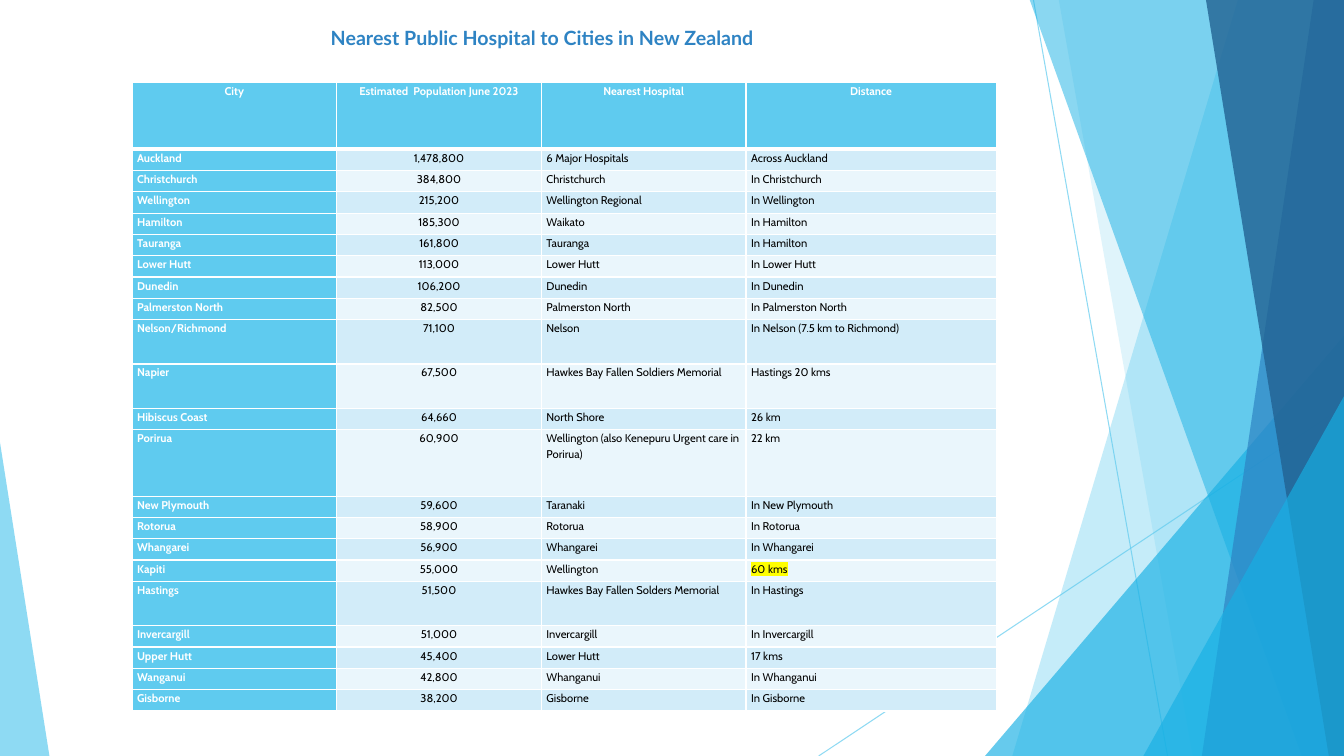
from dataclasses import dataclass

from lxml.etree import SubElement
from pptx import Presentation
from pptx.dml.color import RGBColor
from pptx.enum.shapes import MSO_CONNECTOR, MSO_SHAPE
from pptx.enum.text import MSO_ANCHOR, MSO_AUTO_SIZE, PP_ALIGN
from pptx.oxml import parse_xml
from pptx.oxml.ns import nsdecls, qn
from pptx.util import Inches, Pt

COLORS = {
    "sky": "5FCBEF",
    "cyan": "17B0E4",
    "blue": "2E83C3",
    "navy": "226292",
    "band_dark": "D2ECF9",
    "band_light": "EAF6FC",
    "white": "FFFFFF",
    "black": "000000",
    "yellow": "FFFF00",
}
SLIDE_WIDTH, SLIDE_HEIGHT = 13.33, 7.5
TABLE_HEIGHT = 6.24
COLUMN_WIDTHS = [2.03, 2.03, 2.03, 2.48]
HEADERS = ["City", "Estimated  Population June 2023", "Nearest Hospital", "Distance"]
DOUBLE, TRIPLE = 0.44, 0.66


@dataclass
class Ray:
    start: tuple[float, float]
    end: tuple[float, float]


@dataclass
class Panel:
    top: float
    bottom: float
    color: str
    opacity: int


@dataclass
class Peak:
    left: float
    top: float
    width: float
    apex: float
    color: str
    opacity: int


@dataclass
class City:
    name: str
    population: str
    hospital: str
    distance: str
    height: float | None = None
    highlight: str | None = None


DECORATIONS = [
    Ray((10.25, 0), (11.58, SLIDE_HEIGHT)),
    Ray((SLIDE_WIDTH, 4.03), (8.12, SLIDE_HEIGHT)),
    Panel(12.28, 10.04, "sky", 36),
    Panel(10.5, 11.83, "sky", 20),
    Peak(9.77, 3.33, 3.56, 1, "cyan", 66),
    Panel(10.21, 12.91, "cyan", 50),
    Panel(13.03, 11.92, "blue", 70),
    Panel(11.96, 13.18, "navy", 80),
    Peak(11.34, 3.93, 1.99, 1, "cyan", 66),
    Peak(0, 4.39, 0.49, 0, "sky", 70),
]
CITIES = [
    City("Auckland", "1,478,800", "6 Major Hospitals", "Across Auckland"),
    City("Christchurch", "384,800", "Christchurch", "In Christchurch"),
    City("Wellington", "215,200", "Wellington Regional", "In Wellington"),
    City("Hamilton", "185,300", "Waikato", "In Hamilton"),
    City("Tauranga", "161,800", "Tauranga", "In Hamilton"),
    City("Lower Hutt", "113,000", "Lower Hutt", "In Lower Hutt"),
    City("Dunedin", "106,200", "Dunedin", "In Dunedin"),
    City("Palmerston North", "82,500", "Palmerston North", "In Palmerston North"),
    City("Nelson/Richmond", "71,100", "Nelson", "In Nelson (7.5 km to Richmond)", DOUBLE),
    City("Napier", "67,500", "Hawkes Bay Fallen Soldiers Memorial", "Hastings 20 kms", DOUBLE),
    City("Hibiscus Coast", "64,660", "North Shore", "26 km"),
    City("Porirua", "60,900", "Wellington (also Kenepuru Urgent care in Porirua)", "22 km", TRIPLE),
    City("New Plymouth", "59,600", "Taranaki", "In New Plymouth"),
    City("Rotorua", "58,900", "Rotorua", "In Rotorua"),
    City("Whangarei", "56,900", "Whangarei", "In Whangarei"),
    City("Kapiti", "55,000", "Wellington", "60 kms", highlight="yellow"),
    City("Hastings", "51,500", "Hawkes Bay Fallen Solders Memorial", "In Hastings", DOUBLE),
    City("Invercargill", "51,000", "Invercargill", "In Invercargill"),
    City("Upper Hutt", "45,400", "Lower Hutt", "17 kms"),
    City("Wanganui", "42,800", "Whanganui", "In Whanganui"),
    City("Gisborne", "38,200", "Gisborne", "In Gisborne"),
]


def rgb(color: str) -> RGBColor:
    return RGBColor.from_string(COLORS[color])


def set_opacity(shape, percent: int) -> None:
    for color in shape._element.spPr.iter(qn("a:srgbClr")):
        SubElement(color, qn("a:alpha"), val=str(percent * 1000))


def write_text(frame, text: str, *, size: float, font: str, color: str, bold: bool = False,
               align=PP_ALIGN.LEFT, line_spacing: float = 1.0, gap: float = 0,
               highlight: str | None = None) -> None:
    paragraph = frame.paragraphs[0]
    paragraph.alignment = align
    paragraph.line_spacing = line_spacing
    paragraph.space_before = paragraph.space_after = Pt(gap)
    run = paragraph.add_run()
    run.text = text
    run.font.size = Pt(size)
    run.font.name = font
    run.font.bold = bold
    run.font.color.rgb = rgb(color)
    if highlight:
        run._r.rPr.find(qn("a:solidFill")).addnext(parse_xml(
            f'<a:highlight {nsdecls("a")}><a:srgbClr val="{COLORS[highlight]}"/></a:highlight>'))


def draw_ray(slide, ray: Ray) -> None:
    connector = slide.shapes.add_connector(
        MSO_CONNECTOR.STRAIGHT, *(Inches(value) for value in ray.start + ray.end))
    connector.line.color.rgb = rgb("sky")
    connector.line.width = Pt(0.75)
    set_opacity(connector, 70)
    SubElement(connector._element.spPr, qn("a:effectLst"))


def draw_area(slide, area: Panel | Peak) -> None:
    if isinstance(area, Panel):
        corners = [(area.top, -0.01), (SLIDE_WIDTH, -0.01),
                   (SLIDE_WIDTH, SLIDE_HEIGHT), (area.bottom, SLIDE_HEIGHT)]
        points = [(Inches(x), Inches(y)) for x, y in corners]
        builder = slide.shapes.build_freeform(*points[0])
        builder.add_line_segments(points[1:])
        shape = builder.convert_to_shape()
    else:
        shape = slide.shapes.add_shape(
            MSO_SHAPE.ISOSCELES_TRIANGLE, Inches(area.left), Inches(area.top),
            Inches(area.width), Inches(SLIDE_HEIGHT - area.top))
        shape.adjustments[0] = area.apex
    shape.shadow.inherit = False
    shape.fill.solid()
    shape.fill.fore_color.rgb = rgb(area.color)
    set_opacity(shape, area.opacity)
    shape.line.fill.background()


def fill_cell(cell, text: str, fill: str, *, top: float = 1, bottom: float = 1, **text_format) -> None:
    cell.margin_left = cell.margin_right = Inches(0.05)
    cell.margin_top = cell.margin_bottom = 0
    cell.fill.solid()
    cell.fill.fore_color.rgb = rgb(fill)
    borders = {"lnL": 1, "lnR": 1, "lnT": top, "lnB": bottom}
    for position, (side, width) in enumerate(borders.items()):
        cell._tc.tcPr.insert(position, parse_xml(
            f'<a:{side} {nsdecls("a")} w="{Pt(width)}"><a:solidFill>'
            f'<a:srgbClr val="{COLORS["white"]}"/></a:solidFill></a:{side}>'))
    write_text(cell.text_frame, text, size=8, font="Cabin", line_spacing=1.15, gap=6, **text_format)


def draw_table(slide, cities: list[City]) -> None:
    table = slide.shapes.add_table(
        len(cities) + 1, len(HEADERS), Inches(1.31), Inches(0.82),
        Inches(sum(COLUMN_WIDTHS)), Inches(TABLE_HEIGHT)).table
    table.horz_banding = False
    for column, width in zip(table.columns, COLUMN_WIDTHS):
        column.width = Inches(width)
    heights = [TRIPLE] + [city.height for city in cities]
    single = (TABLE_HEIGHT - sum(filter(None, heights))) / heights.count(None)
    for row, height in zip(table.rows, heights):
        row.height = Inches(height or single)
    for index, header in enumerate(HEADERS):
        fill_cell(table.cell(0, index), header, "sky", bottom=3,
                  color="white", bold=True, align=PP_ALIGN.CENTER)
    for index, city in enumerate(cities, 1):
        band = "band_dark" if index % 2 else "band_light"
        top = 3 if index == 1 else 1
        name, population, hospital, distance = table.rows[index].cells
        fill_cell(name, city.name, "sky", top=top, color="white", bold=True)
        fill_cell(population, city.population, band, top=top, color="black", align=PP_ALIGN.CENTER)
        fill_cell(hospital, city.hospital, band, top=top, color="black")
        fill_cell(distance, city.distance, band, top=top, color="black", highlight=city.highlight)


def draw_title(slide, text: str) -> None:
    title = slide.shapes.title
    title.left, title.top, title.width, title.height = map(Inches, (3.18, 0.2, 6, 0.34))
    frame = title.text_frame
    frame.word_wrap = True
    frame.auto_size = MSO_AUTO_SIZE.SHAPE_TO_FIT_TEXT
    frame.vertical_anchor = MSO_ANCHOR.MIDDLE
    write_text(frame, text, size=14, font="Lato", color="blue", bold=True)


def main() -> None:
    presentation = Presentation()
    presentation.slide_width = Inches(SLIDE_WIDTH)
    presentation.slide_height = Inches(SLIDE_HEIGHT)
    slide = presentation.slides.add_slide(presentation.slide_layouts.get_by_name("Title Only"))
    for decoration in DECORATIONS:
        draw = draw_ray if isinstance(decoration, Ray) else draw_area
        draw(slide, decoration)
    draw_table(slide, CITIES)
    draw_title(slide, "Nearest Public Hospital to Cities in New Zealand")
    presentation.save("out.pptx")


if __name__ == "__main__":
    main()
